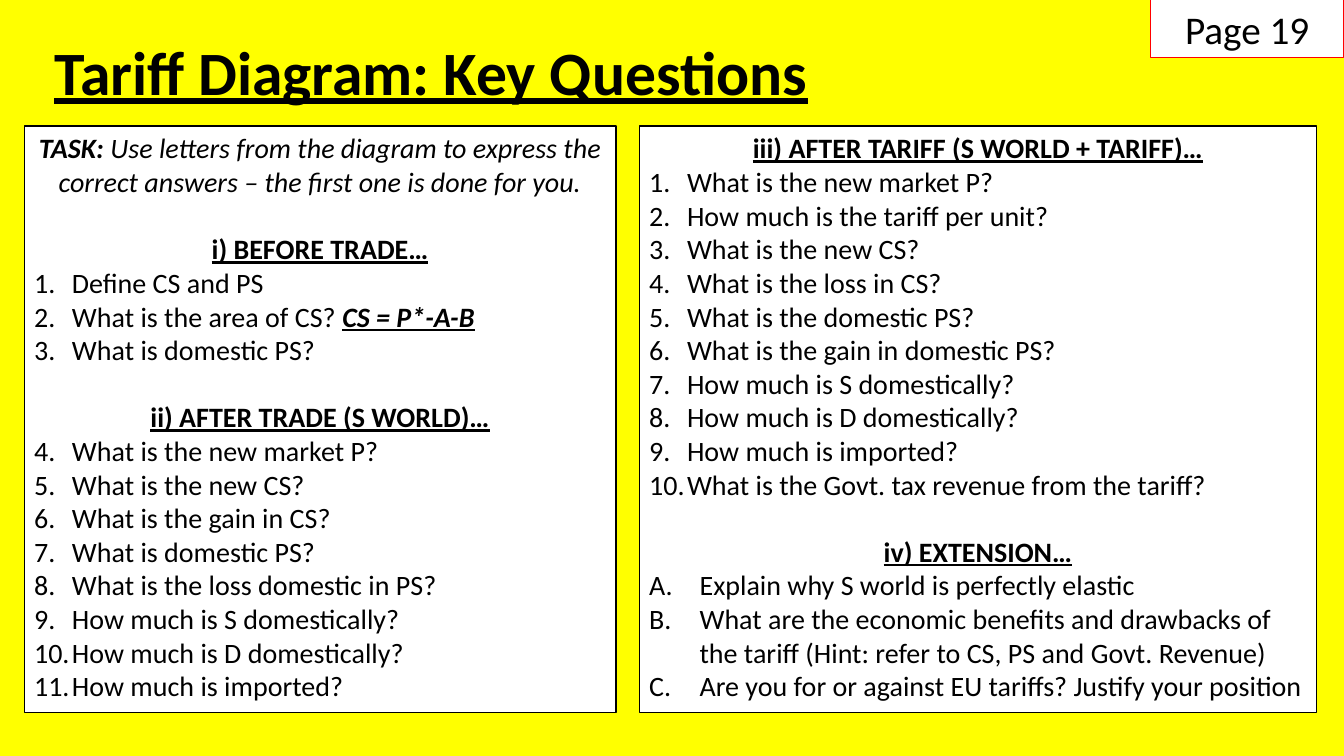
"""Build the tariff diagram question slide."""
from lxml.etree import SubElement
from pptx import Presentation
from pptx.dml.color import RGBColor
from pptx.enum.shapes import MSO_SHAPE
from pptx.enum.text import MSO_ANCHOR, PP_ALIGN
from pptx.oxml.ns import qn
from pptx.util import Inches, Pt

COLOURS = {"background": "FFFF00", "panel": "FFFFFF", "ink": "000000", "tag": "FF0000"}
FONT = "Calibri"
BODY_SIZE = 20
LINE_GAP = 24
WIDTH, HEIGHT = 13.33, 7.5
PANEL_TOP, PANEL_HEIGHT = HEIGHT / 6, 5.82

BEFORE_TRADE = [
    "Define CS and PS",
    ("What is the area of CS? ", "CS = P*-A-B"),
    "What is domestic PS?",
]
AFTER_TRADE = [
    "What is the new market P?",
    "What is the new CS?",
    "What is the gain in CS?",
    "What is domestic PS?",
    "What is the loss domestic in PS?",
    "How much is S domestically?",
    "How much is D domestically?",
    "How much is imported?",
]
AFTER_TARIFF = [
    "What is the new market P?",
    "How much is the tariff per unit?",
    "What is the new CS?",
    "What is the loss in CS?",
    "What is the domestic PS?",
    "What is the gain in domestic PS?",
    "How much is S domestically?",
    "How much is D domestically?",
    "How much is imported?",
    "What is the Govt. tax revenue from the tariff?",
]
EXTENSION = [
    "Explain why S world is perfectly elastic",
    "What are the economic benefits and drawbacks of the tariff "
    "(Hint: refer to CS, PS and Govt. Revenue)",
    "Are you for or against EU tariffs? Justify your position",
]


def colour(name):
    return RGBColor.from_string(COLOURS[name])


def style(paragraph, size=BODY_SIZE, bold=False, italic=False, underline=False):
    font = paragraph.font
    font.name, font.size = FONT, Pt(size)
    font.bold, font.italic, font.underline = bold, italic, underline
    font.color.rgb = colour("ink")


def next_paragraph(frame):
    first = frame.paragraphs[0]
    return frame.add_paragraph() if first.runs else first


def add_box(slide, left, top, width, height, outline):
    box = slide.shapes.add_shape(
        MSO_SHAPE.RECTANGLE, Inches(left), Inches(top), Inches(width), Inches(height))
    box.shadow.inherit = False
    box.fill.solid()
    box.fill.fore_color.rgb = colour("panel")
    box.line.color.rgb = colour(outline)
    box.line.width = Pt(0.75)
    frame = box.text_frame
    frame.word_wrap = True
    frame.vertical_anchor = MSO_ANCHOR.TOP
    return frame


def add_title(slide, text):
    title = slide.shapes.add_textbox(
        Inches(0.44), Inches(0.24), Inches(11.5), Inches(1.01))
    frame = title.text_frame
    frame.word_wrap = True
    frame.vertical_anchor = MSO_ANCHOR.MIDDLE
    heading = frame.paragraphs[0]
    heading.text = text
    heading.line_spacing = 0.9
    style(heading, size=44, bold=True, underline=True)


def add_centred(frame, text, **look):
    line = next_paragraph(frame)
    if line is not frame.paragraphs[0]:
        line.space_before = Pt(LINE_GAP)
    line.text = text
    line.alignment = PP_ALIGN.CENTER
    style(line, **look)


def add_task(frame, label, instruction):
    task = frame.paragraphs[0]
    task.alignment = PP_ALIGN.CENTER
    task.add_run().text = label
    task.add_run().text = instruction
    task.runs[0].font.bold = True
    style(task, italic=True)


def add_questions(frame, heading, questions, scheme="arabicPeriod", start=1, indent=0.375):
    add_centred(frame, heading, bold=True, underline=True)
    for question in questions:
        line = frame.add_paragraph()
        line.alignment = PP_ALIGN.LEFT
        properties = line._p.get_or_add_pPr()
        properties.set("marL", str(Inches(indent)))
        properties.set("indent", str(-Inches(indent)))
        SubElement(properties, qn("a:buFont"), typeface="+mj-lt")
        numbering = SubElement(properties, qn("a:buAutoNum"), type=scheme)
        if start > 1:
            numbering.set("startAt", str(start))
        wording, *answer = (question,) if isinstance(question, str) else question
        line.add_run().text = wording
        for text in answer:
            run = line.add_run()
            run.text = text
            run.font.bold = run.font.italic = run.font.underline = True
        style(line)


def main():
    deck = Presentation()
    deck.slide_width, deck.slide_height = Inches(WIDTH), Inches(HEIGHT)
    slide = deck.slides.add_slide(deck.slide_layouts[6])
    slide.background.fill.solid()
    slide.background.fill.fore_color.rgb = colour("background")

    add_title(slide, "Tariff Diagram: Key Questions")

    trade = add_box(slide, 0.24, PANEL_TOP, 5.87, PANEL_HEIGHT, "ink")
    add_task(trade, "TASK: ", "Use letters from the diagram to express the "
             "correct answers – the first one is done for you.")
    add_questions(trade, "i) BEFORE TRADE…", BEFORE_TRADE)
    add_questions(trade, "ii) AFTER TRADE (S WORLD)…", AFTER_TRADE,
                  start=len(BEFORE_TRADE) + 1)

    tariff = add_box(slide, 6.34, PANEL_TOP, 6.72, PANEL_HEIGHT, "ink")
    add_questions(tariff, "iii) AFTER TARIFF (S WORLD + TARIFF)…", AFTER_TARIFF)
    add_questions(tariff, "iv) EXTENSION…", EXTENSION,
                  scheme="alphaUcPeriod", indent=0.5)

    page = add_box(slide, 11.41, 0, 1.92, 0.57, "tag")
    add_centred(page, "Page 19", size=28)

    deck.save("out.pptx")


if __name__ == "__main__":
    main()
